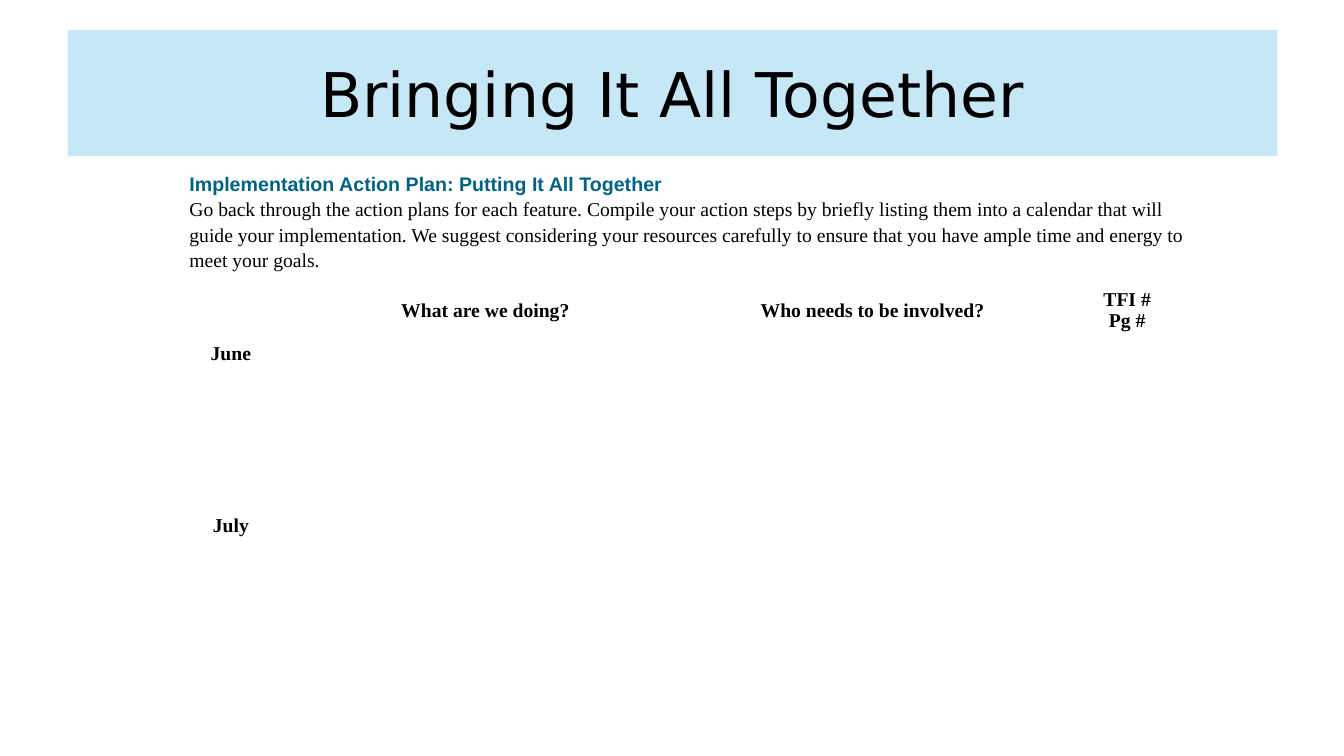
"""Build the action plan calendar slide."""
from lxml.etree import SubElement
from pptx import Presentation
from pptx.dml.color import RGBColor
from pptx.enum.shapes import MSO_SHAPE as Shape
from pptx.enum.text import MSO_ANCHOR as Anchor, PP_ALIGN as Align
from pptx.oxml.ns import qn
from pptx.util import Inches, Pt

BLACK = RGBColor(0x00, 0x00, 0x00)
TEAL = RGBColor(0x00, 0x63, 0x87)
SKY = RGBColor(0xA9, 0xDC, 0xF2)
SERIF = "Times New Roman"
PLAN_LEFT, PLAN_WIDTH = 1.78, 10.09
COLUMN_WIDTHS = [1.02, 4.03, 3.65, 1.4]
ROW_HEIGHTS = [0.55, 0.41, 0.48] + [0.41] * 6
HEADINGS = [["What are we doing?"], ["Who needs to be involved?"], ["TFI #", "Pg #"]]
MONTHS = ["June", "July"]
ROWS_PER_MONTH = 4
INTRO = (
    "Go back through the action plans for each feature. Compile your action steps "
    "by briefly listing them into a calendar that will guide your implementation. "
    "We suggest considering your resources carefully to ensure that you have ample "
    "time and energy to meet your goals."
)


def write(paragraph, text, size=14, font=SERIF, color=BLACK, bold=False,
          align=Align.LEFT, spacing=1.0):
    paragraph.alignment = align
    paragraph.line_spacing = spacing
    run = paragraph.add_run()
    run.text = text
    run.font.size = Pt(size)
    run.font.name = font
    run.font.color.rgb = color
    run.font.bold = bold


def add_banner(slide, text):
    banner = slide.shapes.add_shape(
        Shape.RECTANGLE, Inches(0.67), Inches(0.3), Inches(12), Inches(1.25))
    banner.shadow.inherit = False
    banner.line.fill.background()
    banner.fill.solid()
    banner.fill.fore_color.rgb = SKY
    tint = banner.fill._xPr.find(qn("a:solidFill"))[0]
    SubElement(tint, qn("a:alpha"), val="66000")
    banner.text_frame.vertical_anchor = Anchor.MIDDLE
    write(banner.text_frame.paragraphs[0], text, 44, "DejaVu Sans", align=Align.CENTER)


def add_intro(slide, heading, body):
    intro = slide.shapes.add_textbox(
        Inches(PLAN_LEFT), Inches(1.66), Inches(PLAN_WIDTH), Inches(1.04)).text_frame
    intro.word_wrap = True
    write(intro.paragraphs[0], heading, font="Arial", color=TEAL, bold=True)
    write(intro.add_paragraph(), body, spacing=1.07)


def fill_cell(cell, lines, anchor):
    cell.vertical_anchor = anchor
    for index, line in enumerate(lines):
        frame = cell.text_frame
        paragraph = frame.add_paragraph() if index else frame.paragraphs[0]
        write(paragraph, line, bold=True, align=Align.CENTER, spacing=0.95)


def add_calendar(slide):
    calendar = slide.shapes.add_table(
        len(ROW_HEIGHTS), len(COLUMN_WIDTHS), Inches(PLAN_LEFT), Inches(2.81),
        Inches(PLAN_WIDTH), Inches(sum(ROW_HEIGHTS))).table
    calendar.first_row = calendar.horz_banding = False
    for column, width in zip(calendar.columns, COLUMN_WIDTHS):
        column.width = Inches(width)
    for row, height in zip(calendar.rows, ROW_HEIGHTS):
        row.height = Inches(height)
    for cell in calendar.iter_cells():
        cell.fill.background()
        cell.text_frame.paragraphs[0].font.size = Pt(14)
    for column, lines in enumerate(HEADINGS, start=1):
        fill_cell(calendar.cell(0, column), lines, Anchor.MIDDLE)
    for index, month in enumerate(MONTHS):
        first = 1 + index * ROWS_PER_MONTH
        month_cell = calendar.cell(first, 0)
        month_cell.merge(calendar.cell(first + ROWS_PER_MONTH - 1, 0))
        fill_cell(month_cell, [month], Anchor.TOP)


def main():
    deck = Presentation()
    deck.slide_width, deck.slide_height = Inches(13.33), Inches(7.5)
    slide = deck.slides.add_slide(deck.slide_layouts[6])
    add_banner(slide, "Bringing It All Together")
    add_intro(slide, "Implementation Action Plan: Putting It All Together", INTRO)
    add_calendar(slide)
    deck.save("out.pptx")


main()
